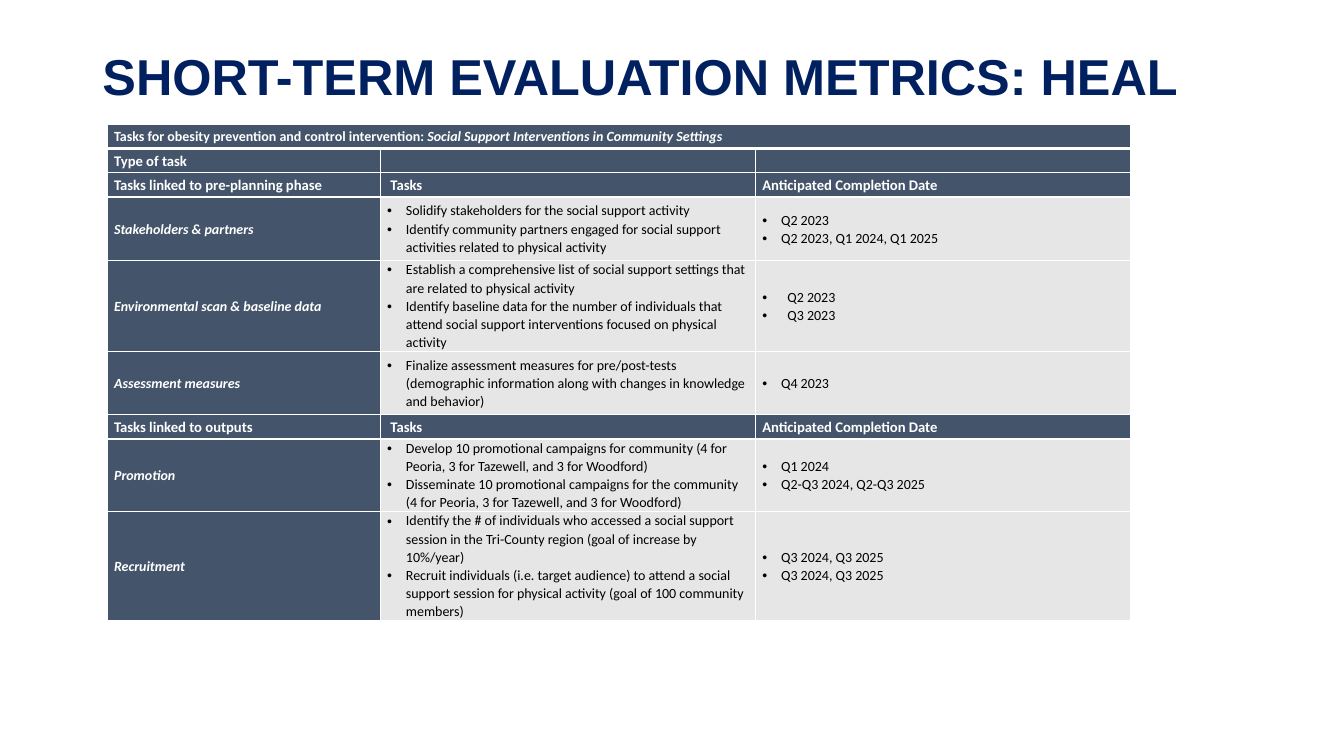
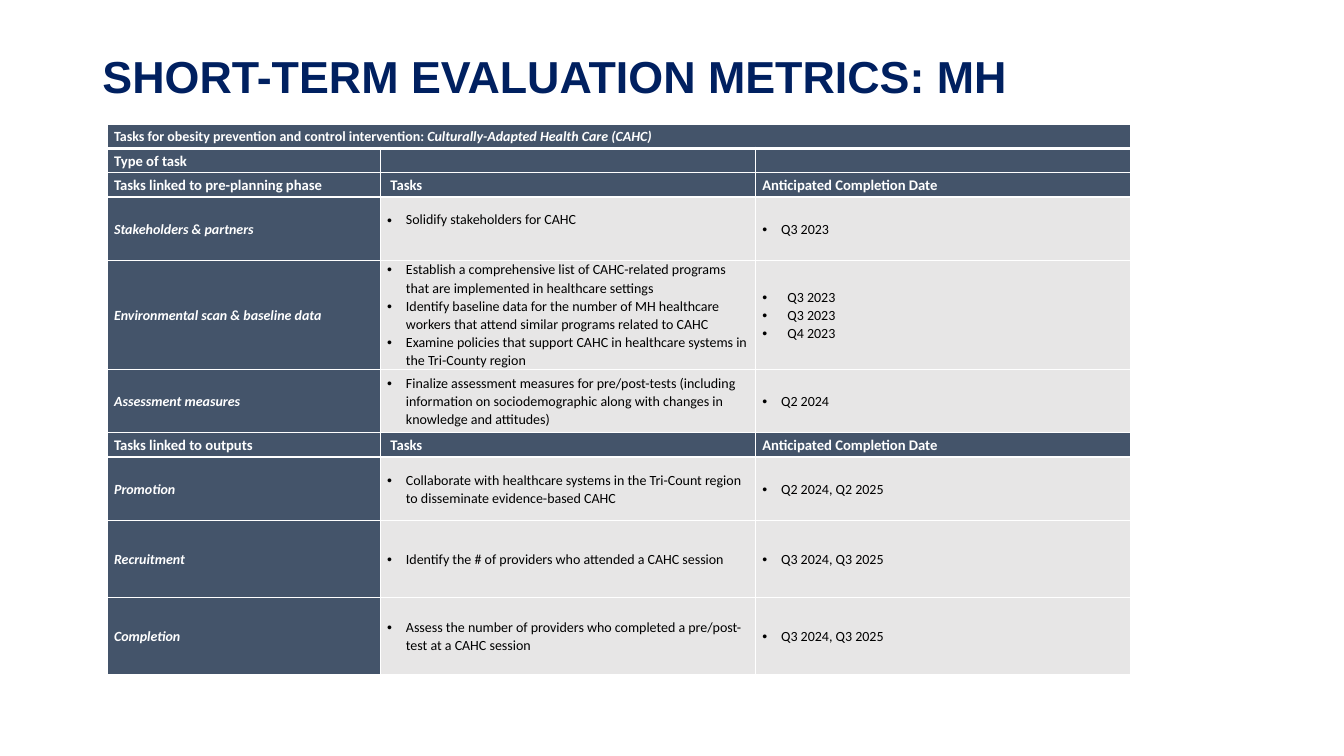
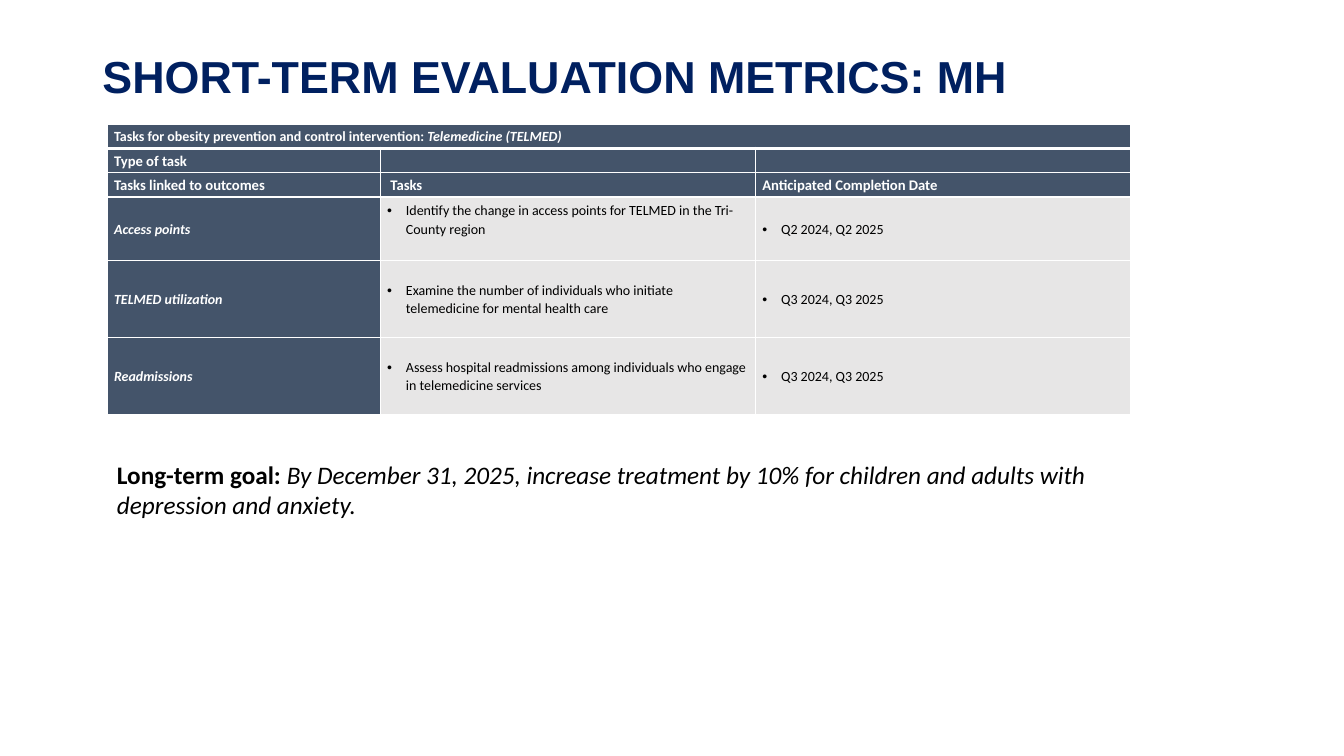
"""Build three slides of short-term evaluation metrics."""
from dataclasses import dataclass

from lxml import etree
from pptx import Presentation
from pptx.dml.color import RGBColor
from pptx.enum.text import MSO_ANCHOR, MSO_AUTO_SIZE, PP_ALIGN
from pptx.oxml.ns import qn
from pptx.util import Pt

MIDDLE = MSO_ANCHOR.MIDDLE
LEFT = PP_ALIGN.LEFT
NO_FIT = MSO_AUTO_SIZE.NONE

COLORS = {"title": "002060", "header": "44546A", "body": "E7E6E6",
          "white": "FFFFFF", "black": "000000"}
TITLE_BOX = (66, 4.5, 828, 104.4)
GOAL_BOX = (76.5, 324.5, 740, 51)
TABLE_LEFT, TABLE_TOP = 76.5, 88.8
COLUMN_WIDTHS = (195, 268, 268)
HEADER_HEIGHT, ROW_HEIGHT, TALL_HEIGHT = 17.3, 45.4, 55.1
CELL_MARGIN = 5
HEADER_INDENT = 2.4
BULLET_INDENT, WIDE_INDENT = 13.5, 18
RAISED = 13
HEADER_SIZE, BODY_SIZE, GOAL_SIZE = 10.5, 10, 18
INTRO = "Tasks for obesity prevention and control intervention: "


@dataclass
class Activity:
    """A table row of tasks and their completion dates."""
    label: str
    tasks: list
    dates: list
    height: float = ROW_HEIGHT
    date_indent: float = BULLET_INDENT
    bottom: float = 0


SLIDES = [
    {
        "title": "SHORT-TERM EVALUATION METRICS: HEAL",
        "size": 36,
        "intervention": "Social Support Interventions in Community Settings",
        "sections": [
            ("Tasks linked to pre-planning phase", [
                Activity("Stakeholders & partners",
                         ["Solidify stakeholders for the social support activity",
                          "Identify community partners engaged for social support "
                          "activities related to physical activity"],
                         ["Q2 2023", "Q2 2023, Q1 2024, Q1 2025"]),
                Activity("Environmental scan & baseline data",
                         ["Establish a comprehensive list of social support settings "
                          "that are related to physical activity",
                          "Identify baseline data for the number of individuals that "
                          "attend social support interventions focused on physical activity"],
                         ["Q2 2023", "Q3 2023"], date_indent=WIDE_INDENT),
                Activity("Assessment measures",
                         ["Finalize assessment measures for pre/post-tests (demographic "
                          "information along with changes in knowledge and behavior)"],
                         ["Q4 2023"]),
            ]),
            ("Tasks linked to outputs", [
                Activity("Promotion",
                         ["Develop 10 promotional campaigns for community (4 for Peoria, "
                          "3 for Tazewell, and 3 for Woodford)",
                          "Disseminate 10 promotional campaigns for the community (4 for "
                          "Peoria, 3 for Tazewell, and 3 for Woodford)"],
                         ["Q1 2024", "Q2-Q3 2024, Q2-Q3 2025"]),
                Activity("Recruitment",
                         ["Identify the # of individuals who accessed a social support "
                          "session in the Tri-County region (goal of increase by 10%/year)",
                          "Recruit individuals (i.e. target audience) to attend a social "
                          "support session for physical activity (goal of 100 community "
                          "members)"],
                         ["Q3 2024, Q3 2025", "Q3 2024, Q3 2025"], TALL_HEIGHT),
            ]),
        ],
    },
    {
        "title": "SHORT-TERM EVALUATION METRICS: MH",
        "size": 32,
        "intervention": "Culturally-Adapted Health Care (CAHC)",
        "sections": [
            ("Tasks linked to pre-planning phase", [
                Activity("Stakeholders & partners", ["Solidify stakeholders for CAHC"],
                         ["Q3 2023"], bottom=RAISED),
                Activity("Environmental scan & baseline data",
                         ["Establish a comprehensive list of CAHC-related programs that "
                          "are implemented in healthcare settings",
                          "Identify baseline data for the number of MH healthcare workers "
                          "that attend similar programs related to CAHC",
                          "Examine policies that support CAHC in healthcare systems in "
                          "the Tri-County region"],
                         ["Q3 2023", "Q3 2023", "Q4 2023"], date_indent=WIDE_INDENT),
                Activity("Assessment measures",
                         ["Finalize assessment measures for pre/post-tests (including "
                          "information on sociodemographic along with changes in "
                          "knowledge and attitudes)"],
                         ["Q2 2024"]),
            ]),
            ("Tasks linked to outputs", [
                Activity("Promotion",
                         ["Collaborate with healthcare systems in the Tri-Count region to "
                          "disseminate evidence-based CAHC"],
                         ["Q2 2024, Q2 2025"]),
                Activity("Recruitment",
                         ["Identify the # of providers who attended a CAHC session"],
                         ["Q3 2024, Q3 2025"], TALL_HEIGHT),
                Activity("Completion",
                         ["Assess the number of providers who completed a pre/post-test "
                          "at a CAHC session"],
                         ["Q3 2024, Q3 2025"], TALL_HEIGHT),
            ]),
        ],
    },
    {
        "title": "SHORT-TERM EVALUATION METRICS: MH",
        "size": 32,
        "intervention": "Telemedicine (TELMED)",
        "sections": [
            ("Tasks linked to outcomes", [
                Activity("Access points",
                         ["Identify the change in access points for TELMED in the "
                          "Tri-County region"],
                         ["Q2 2024, Q2 2025"], bottom=RAISED),
                Activity("TELMED utilization",
                         ["Examine the number of individuals who initiate telemedicine "
                          "for mental health care"],
                         ["Q3 2024, Q3 2025"], TALL_HEIGHT),
                Activity("Readmissions",
                         ["Assess hospital readmissions among individuals who engage in "
                          "telemedicine services"],
                         ["Q3 2024, Q3 2025"], TALL_HEIGHT),
            ]),
        ],
        "goal": ("Long-term goal: ",
                 "By December 31, 2025, increase treatment by 10% for children and "
                 "adults with depression and anxiety."),
    },
]


def add_span(para, text, size, color, bold=False, italic=False, name="Calibri"):
    """Append one formatted run."""
    span = para.add_run()
    span.text = text
    font = span.font
    font.size, font.name, font.bold, font.italic = Pt(size), name, bold, italic
    font.color.rgb = RGBColor.from_string(COLORS[color])


def add_bullet(para, indent):
    """Give a paragraph a hanging round bullet."""
    properties = para._p.get_or_add_pPr()
    properties.set("marL", str(Pt(indent)))
    properties.set("indent", str(-Pt(indent)))
    etree.SubElement(properties, qn("a:buFont"), typeface="Arial")
    etree.SubElement(properties, qn("a:buChar"), char="•")


def style_cell(cell, fill, bottom_line=1):
    """Set white borders, margins, anchor and fill of a cell."""
    properties = cell._tc.get_or_add_tcPr()
    for side, width in (("L", 1), ("R", 1), ("T", 1), ("B", bottom_line)):
        line = etree.SubElement(properties, qn("a:ln" + side), w=str(Pt(width)))
        solid = etree.SubElement(line, qn("a:solidFill"))
        etree.SubElement(solid, qn("a:srgbClr"), val=COLORS["white"])
    cell.margin_left = cell.margin_right = Pt(CELL_MARGIN)
    cell.margin_top = cell.margin_bottom = 0
    cell.vertical_anchor = MIDDLE
    cell.fill.solid()
    cell.fill.fore_color.rgb = RGBColor.from_string(COLORS[fill])


def fill_header(cell, text, size=HEADER_SIZE, italic=False):
    """Write a dark cell, which may be empty."""
    style_cell(cell, "header")
    para = cell.text_frame.paragraphs[0]
    para.line_spacing = 1.07
    if text:
        add_span(para, text, size, "white", True, italic)
    else:
        etree.SubElement(para._p, qn("a:endParaRPr"), sz=str(int(size * 100)))


def fill_bullets(cell, items, indent):
    """Write a light cell with a bulleted list."""
    style_cell(cell, "body")
    frame = cell.text_frame
    for index, item in enumerate(items):
        para = frame.add_paragraph() if index else frame.paragraphs[0]
        para.line_spacing = 1.07
        add_bullet(para, indent)
        add_span(para, item, BODY_SIZE, "black")


def add_title(page, text, size):
    """Place and format the title."""
    title = page.shapes.title
    title.left, title.top, title.width, title.height = map(Pt, TITLE_BOX)
    frame = title.text_frame
    frame.auto_size, frame.vertical_anchor, frame.word_wrap = NO_FIT, MIDDLE, True
    para = frame.paragraphs[0]
    para.alignment, para.line_spacing = LEFT, 0.9
    add_span(para, text, size, "title", True, name="Arial")


def add_task_table(page, intervention, sections):
    """Draw the table: intervention, type of task, then each section."""
    rows = [("Type of task", "", "")]
    for heading, activities in sections:
        rows += [(heading, "Tasks", "Anticipated Completion Date"), *activities]
    heights = [HEADER_HEIGHT] + [
        row.height if isinstance(row, Activity) else HEADER_HEIGHT for row in rows]
    table = page.shapes.add_table(
        len(heights), len(COLUMN_WIDTHS), Pt(TABLE_LEFT), Pt(TABLE_TOP),
        Pt(sum(COLUMN_WIDTHS)), Pt(sum(heights))).table
    table.first_row = table.horz_banding = False
    for column, width in zip(table.columns, COLUMN_WIDTHS):
        column.width = Pt(width)
    for table_row, height in zip(table.rows, heights):
        table_row.height = Pt(height)

    for cell in table.rows[0].cells:
        style_cell(cell, "header", 3)
    banner = table.cell(0, 0)
    banner.merge(table.cell(0, len(COLUMN_WIDTHS) - 1))
    para = banner.text_frame.paragraphs[0]
    para.line_spacing = 1.07
    add_span(para, INTRO, BODY_SIZE, "white", True)
    add_span(para, intervention, BODY_SIZE, "white", True, True)

    for index, row in enumerate(rows, 1):
        cells = list(table.rows[index].cells)
        if isinstance(row, Activity):
            fill_header(cells[0], row.label, BODY_SIZE, True)
            fill_bullets(cells[1], row.tasks, BULLET_INDENT)
            fill_bullets(cells[2], row.dates, row.date_indent)
            cells[1].margin_bottom = Pt(row.bottom)
        else:
            for cell, text in zip(cells, row):
                fill_header(cell, text)
            cells[1].margin_left = Pt(CELL_MARGIN + HEADER_INDENT)


def add_goal(page, label, text):
    """Write the long-term goal below the table."""
    frame = page.shapes.add_textbox(*map(Pt, GOAL_BOX)).text_frame
    frame.word_wrap = True
    para = frame.paragraphs[0]
    add_span(para, label, GOAL_SIZE, "black", bold=True)
    add_span(para, text, GOAL_SIZE, "black", italic=True)


def main():
    """Build and save the deck."""
    deck = Presentation()
    deck.slide_width, deck.slide_height = Pt(960), Pt(540)
    for content in SLIDES:
        page = deck.slides.add_slide(deck.slide_layouts[5])
        add_title(page, content["title"], content["size"])
        add_task_table(page, content["intervention"], content["sections"])
        if "goal" in content:
            add_goal(page, *content["goal"])
    deck.save("out.pptx")


if __name__ == "__main__":
    main()
